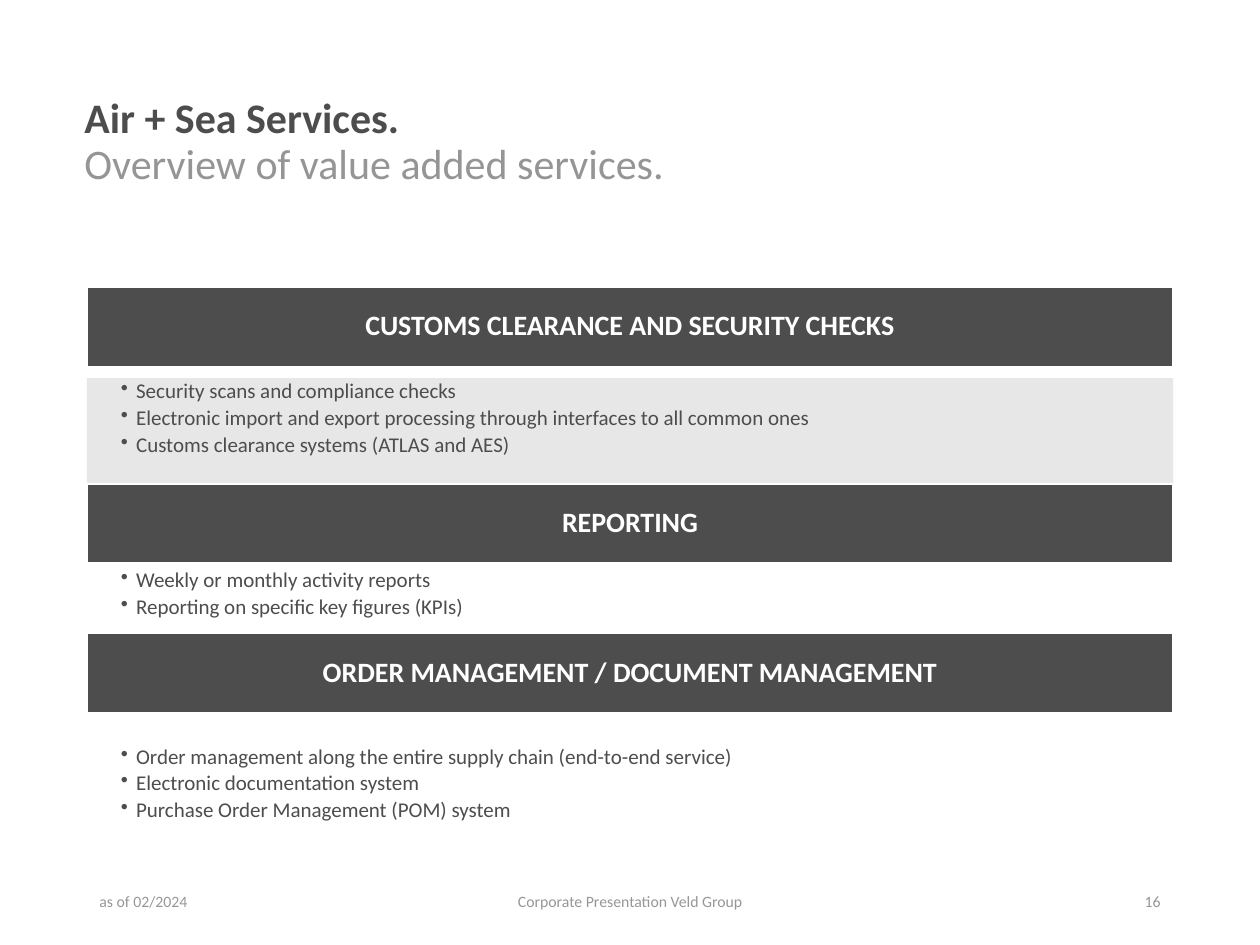
import pptx
import pptx.util
import pptx.dml.color
import pptx.enum.shapes
import pptx.enum.text
import pptx.oxml
import pptx.oxml.ns
from lxml import etree

Inches = pptx.util.Inches
Pt = pptx.util.Pt
RGBColor = pptx.dml.color.RGBColor
ALIGN = pptx.enum.text.PP_ALIGN
ANCHOR = pptx.enum.text.MSO_ANCHOR

DARK = RGBColor(0x4D, 0x4D, 0x4D)
GREY = RGBColor(0x95, 0x95, 0x95)
FOOT = RGBColor(0x97, 0x97, 0x97)
PALE = RGBColor(0xE7, 0xE7, 0xE7)
WHITE = RGBColor(0xFF, 0xFF, 0xFF)

LEFT, WIDTH = 0.69, 8.62
BAR = 0.63

# Heading, bar top, list top, list height, list fill, bullets
BLOCKS = [
    ("CUSTOMS CLEARANCE AND SECURITY CHECKS", 2.28, 3.0, 0.89, PALE, [
        "Security scans and compliance checks",
        "Electronic import and export processing through interfaces"
        " to all common ones",
        "Customs clearance systems (ATLAS and AES)"]),
    ("REPORTING", 3.84, 4.5, 0.56, None, [
        "Weekly or monthly activity reports",
        "Reporting on specific key figures (KPIs)"]),
    ("ORDER MANAGEMENT / DOCUMENT MANAGEMENT", 5.03, 5.9, 0.89, None, [
        "Order management along the entire supply chain"
        " (end-to-end service)",
        "Electronic documentation system",
        "Purchase Order Management (POM) system"]),
]


def set_frame(shape, anchor, pads):
    """Prepare the text frame; pads are left, top, right, bottom."""
    frame = shape.text_frame
    frame.word_wrap = True
    frame.auto_size = pptx.enum.text.MSO_AUTO_SIZE.NONE
    frame.vertical_anchor = anchor
    (frame.margin_left, frame.margin_top,
     frame.margin_right, frame.margin_bottom) = map(Inches, pads)
    return frame


def add_run(para, text, size, color, bold=False, align=ALIGN.LEFT):
    para.alignment = align
    run = para.add_run()
    run.text = text
    font = run.font
    font.name, font.size, font.bold = "Calibri", Pt(size), bold
    font.color.rgb = color


def add_rect(slide, box, fill, line=None):
    kind = pptx.enum.shapes.MSO_SHAPE.RECTANGLE
    rect = slide.shapes.add_shape(kind, *map(Inches, box))
    rect.shadow.inherit = False
    if fill is None:
        rect.fill.background()
    else:
        rect.fill.solid()
        rect.fill.fore_color.rgb = fill
    if line is None:
        rect.line.fill.background()
    else:
        rect.line.color.rgb = line
        rect.line.width = Pt(0.85)
    return rect


def add_bullet(para):
    props = para._p.get_or_add_pPr()
    props.set("marL", str(Inches(0.12)))
    props.set("indent", str(-Inches(0.12)))
    mark = etree.SubElement(props, pptx.oxml.ns.qn("a:buChar"))
    mark.set("char", "•")


def add_head(slide, box):
    """Title in the upper half of the box, subtitle in the lower."""
    left, top, width, height = box
    half = height / 2
    sub = slide.shapes.add_textbox(
        *map(Inches, (left, top + half, width, half)))
    title = slide.shapes.title
    title.left, title.top, title.width, title.height = map(
        Inches, (left, top, width, half))
    rows = [(title, "Air + Sea Services.", DARK, True),
            (sub, "Overview of value added services.", GREY, False)]
    for shape, text, color, bold in rows:
        frame = set_frame(shape, ANCHOR.BOTTOM, (0, 0, 0, 0))
        add_run(frame.paragraphs[0], text, 24, color, bold)


def add_bar(slide, box, text):
    bar = add_rect(slide, box, DARK, WHITE)
    para = set_frame(bar, ANCHOR.MIDDLE, [0.07] * 4).paragraphs[0]
    para.line_spacing = 0.9
    add_run(para, text, 16, WHITE, True, ALIGN.CENTER)


def add_list(slide, box, fill, items):
    panel = add_rect(slide, box, fill)
    frame = set_frame(panel, ANCHOR.TOP, (0.27, 0.02, 0.09, 0.02))
    for i, item in enumerate(items):
        para = frame.add_paragraph() if i else frame.paragraphs[0]
        add_bullet(para)
        para.line_spacing = 0.9
        para.space_after = Pt(2.4)
        add_run(para, item, 12, DARK)


def add_foot(slide, box):
    """Date, name and page number at the left, centre and right."""
    left, top, width, height = box
    parts = [("as of 02/2024", 2.25, 0, ALIGN.LEFT),
             ("Corporate Presentation Veld Group", 3.38, 0.5, ALIGN.CENTER),
             ("16", 2.25, 1, ALIGN.RIGHT)]
    for text, wide, share, align in parts:
        start = left + (width - wide) * share
        note = slide.shapes.add_textbox(
            *map(Inches, (start, top, wide, height)))
        frame = set_frame(note, ANCHOR.MIDDLE, (0.1, 0.05, 0.1, 0.05))
        add_run(frame.paragraphs[0], text, 9, FOOT, align=align)


def main():
    deck = pptx.Presentation()
    deck.slide_width, deck.slide_height = Inches(10), Inches(7.5)
    slide = deck.slides.add_slide(deck.slide_layouts[5])
    add_head(slide, (0.67, 0.77, 7.48, 0.72))
    # Service blocks
    for name, top, start, height, fill, items in BLOCKS:
        add_list(slide, (LEFT, start, WIDTH, height), fill, items)
        add_bar(slide, (LEFT, top, WIDTH, BAR), name)
    add_foot(slide, (LEFT, 6.95, WIDTH, 0.4))
    deck.save("out.pptx")


if __name__ == "__main__":
    main()
